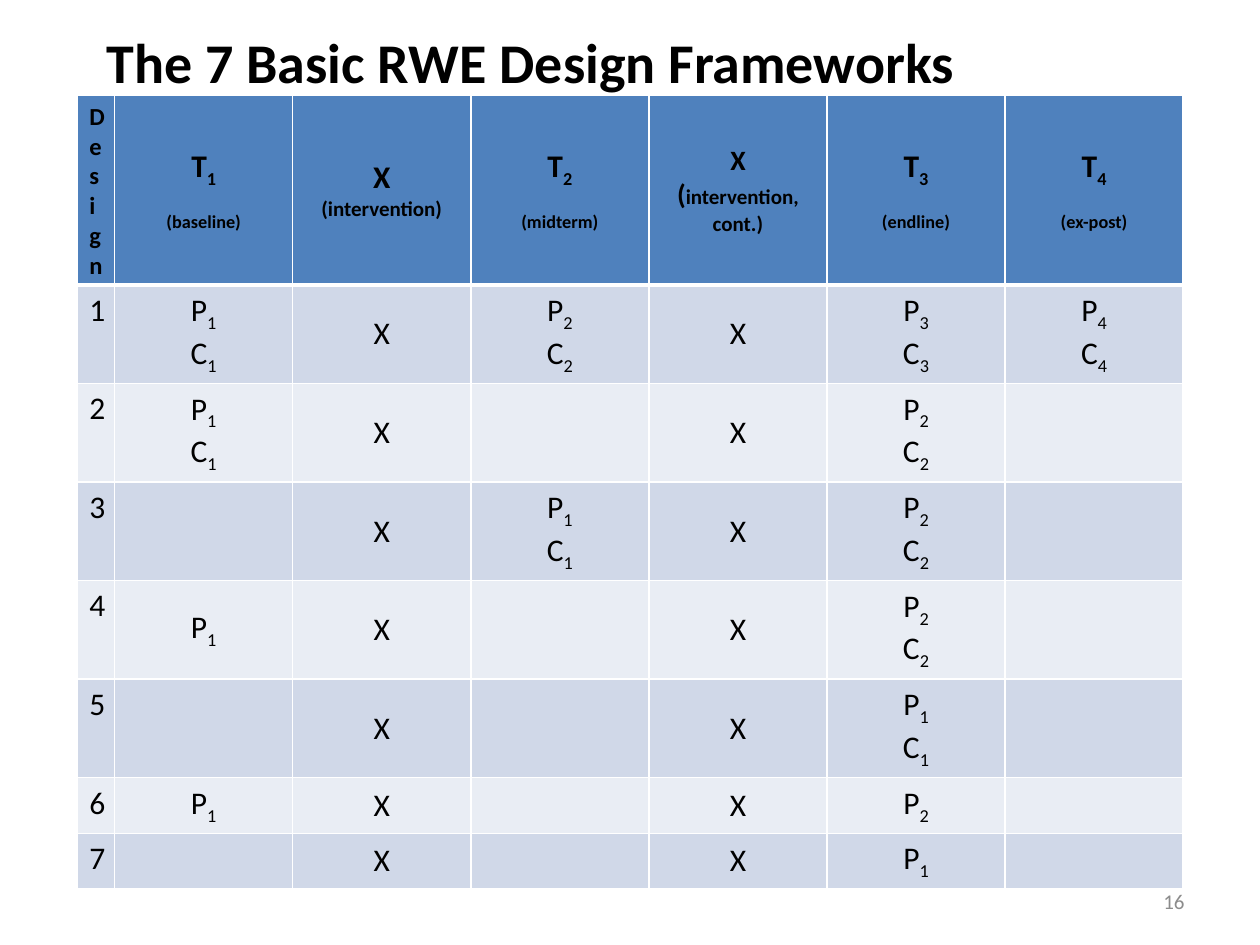
from lxml.etree import SubElement
from pptx import Presentation
from pptx.dml.color import RGBColor
from pptx.enum.text import MSO_ANCHOR, PP_ALIGN
from pptx.oxml.ns import qn
from pptx.util import Pt

FONT = "Calibri"
BLACK = RGBColor(0x00, 0x00, 0x00)
GRAY = RGBColor(0x8C, 0x8C, 0x8C)
WHITE = RGBColor(0xFF, 0xFF, 0xFF)
HEADER_BLUE = RGBColor(0x4F, 0x81, 0xBD)
BANDS = [RGBColor(0xD0, 0xD8, 0xE8), RGBColor(0xE9, 0xED, 0xF4)]

TITLE = "The 7 Basic RWE Design Frameworks"
PAGE_NUMBER = "16"

# Each line is a list of (text, size); an underscore marks a subscript.
HEADERS = [
    [[("Design", 14)]],
    [[("T_1", 18)], [("_(baseline)", 18)]],
    [[("X", 18)], [("(intervention)", 12)]],
    [[("T_2", 18)], [("_(midterm)", 18)]],
    [[("X", 16)], [("(", 16), ("intervention, cont.)", 12)]],
    [[("T_3", 18)], [("_(endline)", 18)]],
    [[("T_4", 18)], [("_(ex-post)", 18)]],
]
DESIGNS = [
    ["1", "P_1 C_1", "X", "P_2 C_2", "X", "P_3 C_3", "P_4 C_4"],
    ["2", "P_1 C_1", "X", "", "X", "P_2 C_2", ""],
    ["3", "", "X", "P_1 C_1", "X", "P_2 C_2", ""],
    ["4", "P_1", "X", "", "X", "P_2 C_2", ""],
    ["5", "", "X", "", "X", "P_1 C_1", ""],
    ["6", "P_1", "X", "", "X", "P_2", ""],
    ["7", "", "X", "", "X", "P_1", ""],
]

TABLE_LEFT, TABLE_TOP, TABLE_WIDTH = 43.9, 54.7, 632.2
DESIGN_WIDTH = 21.6
HEADER_HEIGHT, PAIR_HEIGHT, SINGLE_HEIGHT = 108, 50.4, 29.5
BODY_SIZE = 18


def style(paragraph, size, color=BLACK, bold=False, align=PP_ALIGN.LEFT):
    paragraph.alignment = align
    font = paragraph.font
    font.name, font.size, font.bold = FONT, Pt(size), bold
    font.color.rgb = color


def add_label(slide, text, box, **look):
    frame = slide.shapes.add_textbox(*map(Pt, box)).text_frame
    frame.word_wrap = True
    frame.text = text
    style(frame.paragraphs[0], **look)
    return frame


def write_lines(cell, lines, bold, align):
    frame = cell.text_frame
    for index, line in enumerate(lines):
        paragraph = frame.add_paragraph() if index else frame.paragraphs[0]
        base_size = line[0][1]
        style(paragraph, base_size, bold=bold, align=align)
        for text, size in line:
            for is_subscript, part in enumerate(text.split("_")):
                if not part:
                    continue
                run = paragraph.add_run()
                run.text = part
                if size != base_size:
                    run.font.size = Pt(size)
                if is_subscript:
                    run.font._element.set("baseline", "-25000")


def draw_borders(cell, widths):
    properties = cell._tc.get_or_add_tcPr()
    for side, width in zip("LRTB", widths):
        line = SubElement(properties, qn(f"a:ln{side}"), w=str(Pt(width)))
        fill = SubElement(line, qn("a:solidFill"))
        SubElement(fill, qn("a:srgbClr"), val=str(WHITE))


def add_design_table(slide):
    rows = [HEADERS] + [
        [[[(line, BODY_SIZE)] for line in entry.split()] for entry in design]
        for design in DESIGNS
    ]
    heights = [HEADER_HEIGHT] + [
        PAIR_HEIGHT if any(" " in entry for entry in design) else SINGLE_HEIGHT
        for design in DESIGNS
    ]
    period_count = len(HEADERS) - 1
    period_width = (TABLE_WIDTH - DESIGN_WIDTH) / period_count
    widths = [DESIGN_WIDTH] + [period_width] * period_count

    table = slide.shapes.add_table(
        len(rows), len(widths), Pt(TABLE_LEFT), Pt(TABLE_TOP),
        Pt(TABLE_WIDTH), Pt(sum(heights))).table
    table.first_row = table.horz_banding = False
    for column, width in zip(table.columns, widths):
        column.width = Pt(width)
    for r, (row, height) in enumerate(zip(rows, heights)):
        table.rows[r].height = Pt(height)
        is_header = r == 0
        for c, lines in enumerate(row):
            cell = table.cell(r, c)
            cell.vertical_anchor = MSO_ANCHOR.MIDDLE if c else MSO_ANCHOR.TOP
            align = PP_ALIGN.LEFT if is_header and c == 0 else PP_ALIGN.CENTER
            write_lines(cell, lines, is_header, align)
            draw_borders(cell, (1, 1, 3 if r == 1 else 1, 3 if is_header else 1))
            cell.fill.solid()
            cell.fill.fore_color.rgb = HEADER_BLUE if is_header else BANDS[(r - 1) % 2]


def main():
    deck = Presentation()
    deck.slide_width, deck.slide_height = Pt(720), Pt(540)
    slide = deck.slides.add_slide(deck.slide_layouts[6])
    page = add_label(slide, PAGE_NUMBER, (516.2, 500.4, 167.8, 28.8),
                     size=12, color=GRAY, align=PP_ALIGN.RIGHT)
    page.vertical_anchor = MSO_ANCHOR.MIDDLE
    add_design_table(slide)
    add_label(slide, TITLE, (54, 12.2, 581.8, 46), size=32, bold=True)
    deck.save("out.pptx")


if __name__ == "__main__":
    main()
